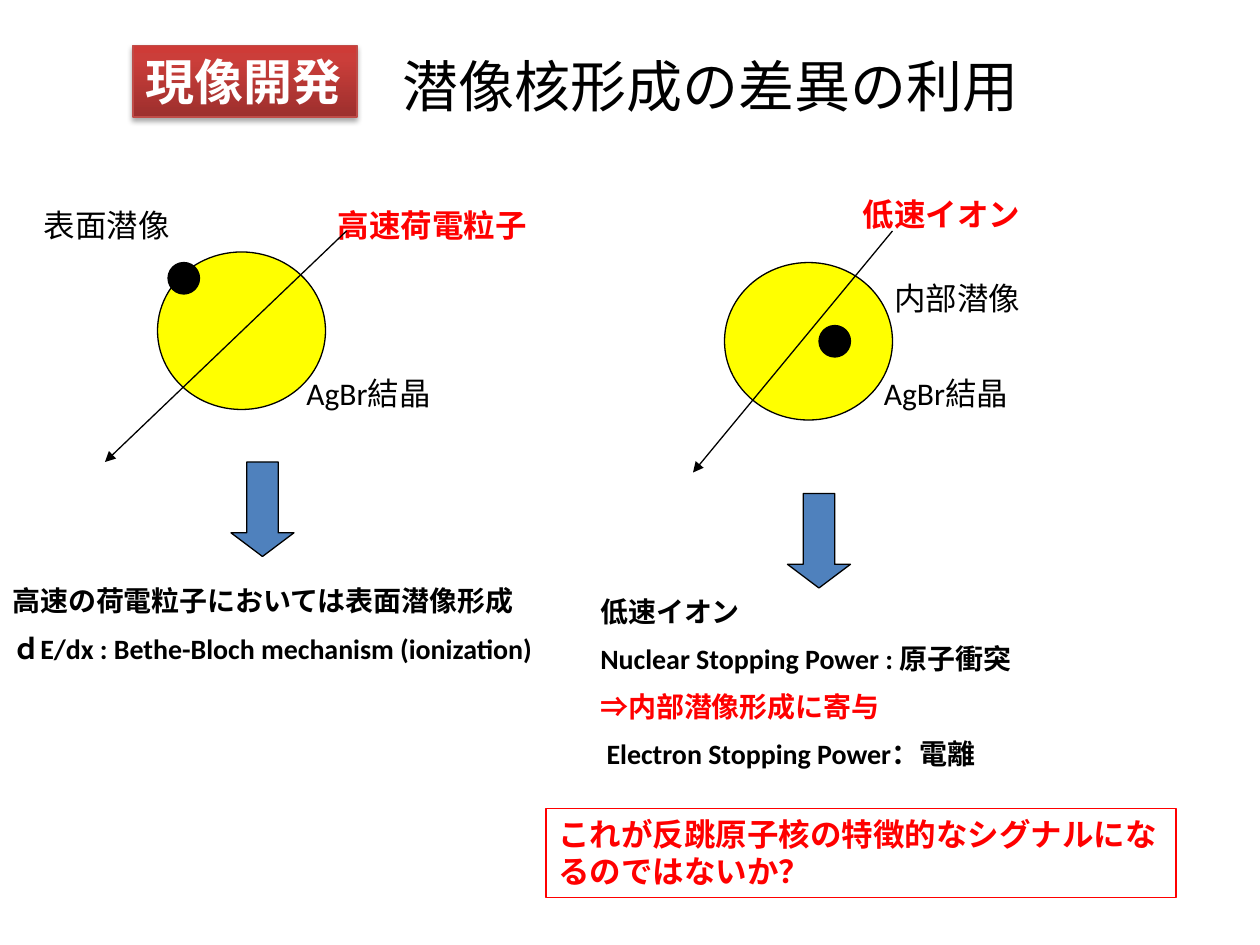
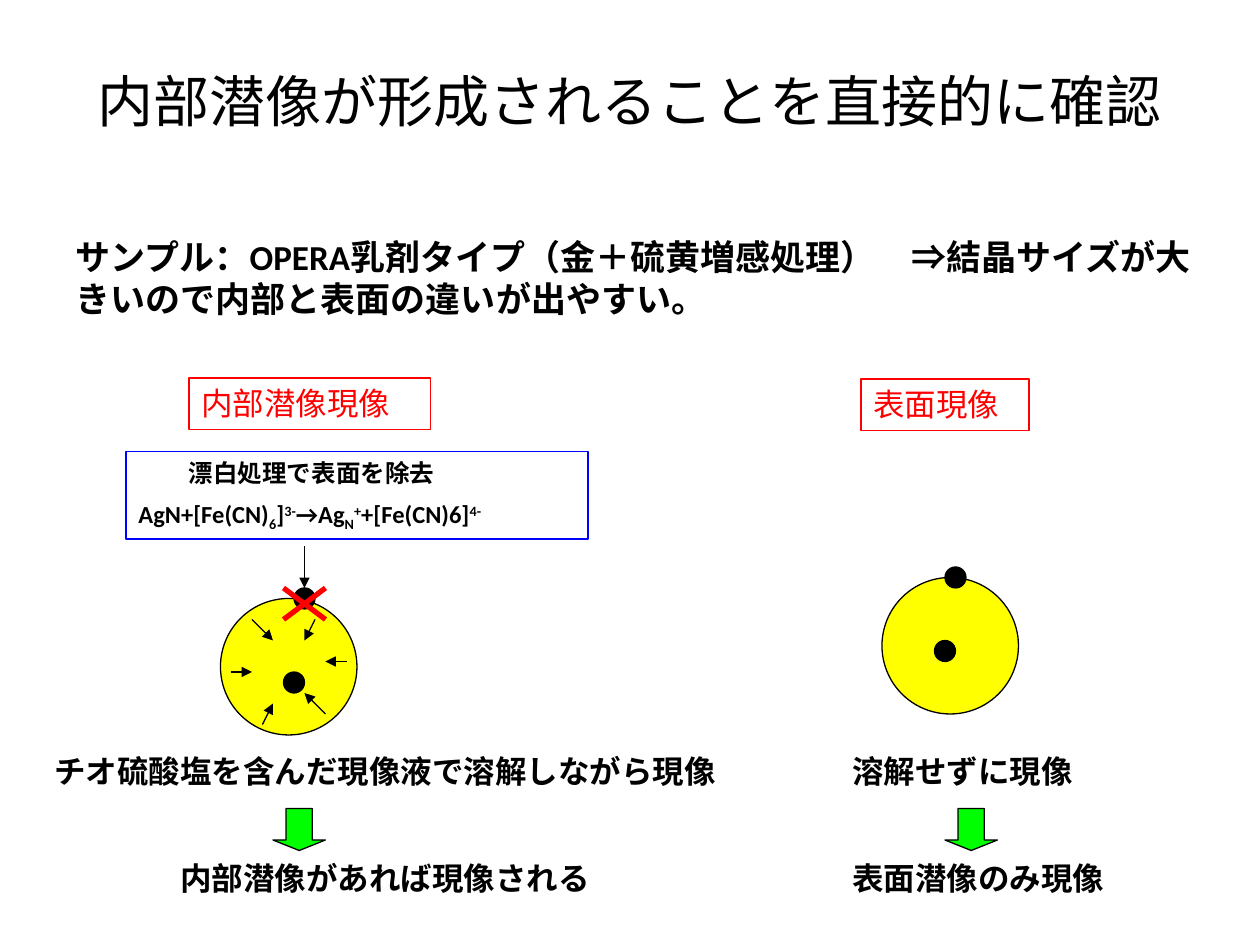
from copy import deepcopy
from dataclasses import dataclass

from lxml import etree
from pptx import Presentation
from pptx.dml.color import RGBColor
from pptx.enum import shapes, text
from pptx.oxml import ns
from pptx.util import Pt


@dataclass(frozen=True)
class Theme:
    """Colours, font and type sizes of the deck."""
    font: str = "Calibri"
    black: str = "000000"
    white: str = "FFFFFF"
    red: str = "FF0000"
    blue: str = "0000FF"
    crystal: str = "FFFF00"
    steel: str = "4F81BD"
    green: str = "00FF00"
    badge_edge: str = "BF4C48"
    badge_stops: tuple = ((0, "9C2F2D"), (0.8, "CB3E3A"), (1, "CE3B37"))
    title: int = 32
    badge: int = 28
    lead: int = 20
    label: int = 18
    body: int = 16
    formula: int = 14
    thin: float = 0.75
    thick: float = 3


@dataclass(frozen=True)
class Para:
    """A paragraph: a string or (string, baseline) pairs, with its layout."""
    content: object
    color: str = ""
    indent: float = 0
    gap: float = 0


T = Theme()
SHAPE = shapes.MSO_SHAPE


def rgb(color):
    """Turn a hex string into a colour."""
    return RGBColor.from_string(color)


def assign(obj, values):
    """Set attributes from a dict of format values."""
    for name, value in values.items():
        setattr(obj, name, value)


def add_xml(parent, tag, **attrs):
    """Append a DrawingML element."""
    el = etree.SubElement(parent, ns.qn("a:" + tag))
    for name, value in attrs.items():
        el.set(name, str(value))
    return el


def set_font(font, size, color, bold=False):
    """Apply the deck font."""
    assign(font, {"name": T.font, "size": Pt(size), "bold": bold})
    font.color.rgb = rgb(color)


def outline(sp, color, width=T.thin):
    """Give a shape or connector a solid line."""
    sp.line.color.rgb = rgb(color)
    sp.line.width = Pt(width)


def write(tf, paras, size, color, bold=False, wrap=True):
    """Fill a text frame, spacing later paragraphs by half the type size."""
    assign(tf, {"word_wrap": wrap, "vertical_anchor": text.MSO_ANCHOR.TOP,
                "auto_size": text.MSO_AUTO_SIZE.SHAPE_TO_FIT_TEXT})
    for i, item in enumerate(paras):
        para = item if isinstance(item, Para) else Para(item)
        p = tf.add_paragraph() if i else tf.paragraphs[0]
        p.alignment = text.PP_ALIGN.LEFT
        if i:
            p.space_before = Pt(para.gap or size / 2)
        if para.indent:
            p._p.get_or_add_pPr().set("marL", str(Pt(para.indent)))
        content = para.content
        for words, base in [(content, 0)] if isinstance(content, str) else content:
            r = p.add_run()
            r.text = words
            set_font(r.font, size, para.color or color, bold)
            if base:
                r._r.get_or_add_rPr().set("baseline", str(base * 1000))


def add_text(sl, at, *paras, size=T.label, color=T.black, bold=False):
    """Add a plain text box."""
    sp = sl.shapes.add_textbox(*map(Pt, at))
    write(sp.text_frame, paras, size, color, bold)


def add_frame(sl, at, *paras, edge=T.red, size=T.label, color=T.red, bold=False, wrap=True):
    """Add an outlined, unfilled box with text."""
    sp = sl.shapes.add_shape(SHAPE.RECTANGLE, *map(Pt, at))
    sp.shadow.inherit = False
    sp.fill.background()
    outline(sp, edge)
    write(sp.text_frame, paras, size, color, bold, wrap)
    return sp


def add_badge(sl, at, words):
    """Add a gradient badge with a soft shadow."""
    sp = add_frame(sl, at, words, edge=T.badge_edge, size=T.badge,
                   color=T.white, bold=True, wrap=False)
    sp.fill.gradient()
    sp.fill.gradient_angle = 90
    stops = sp._element.spPr.find(".//" + ns.qn("a:gsLst"))
    stops.insert(1, deepcopy(stops[0]))
    for stop, (position, color) in zip(sp.fill.gradient_stops, T.badge_stops):
        stop.position = position
        stop.color.rgb = rgb(color)
    effects = sp._element.spPr.find(ns.qn("a:effectLst"))
    shadow = add_xml(effects, "outerShdw", blurRad=Pt(3.1), dist=Pt(1.8),
                     dir=90 * 60000, rotWithShape=0)
    add_xml(add_xml(shadow, "srgbClr", val=T.black), "alpha", val=35000)


def add_solid(sl, kind, at, fill):
    """Add a filled preset shape with a thin black line."""
    sp = sl.shapes.add_shape(kind, *map(Pt, at))
    sp.shadow.inherit = False
    sp.fill.solid()
    sp.fill.fore_color.rgb = rgb(fill)
    outline(sp, T.black)
    return sp


def add_crystal(sl, x, y, w, h):
    """Add a silver bromide crystal."""
    add_solid(sl, SHAPE.OVAL, (x, y, w, h), T.crystal)


def add_speck(sl, x, y, d):
    """Add a latent image speck."""
    add_solid(sl, SHAPE.OVAL, (x, y, d, d), T.black)


def add_down_arrow(sl, at, head, fill):
    """Add a block arrow pointing down."""
    sp = add_solid(sl, SHAPE.DOWN_ARROW, at, fill)
    sp.adjustments[0], sp.adjustments[1] = 0.5, head


def add_line(sl, ends, color=T.black, width=T.thin, arrow=True):
    """Add a straight line, with an arrowhead at its end if asked."""
    sp = sl.shapes.add_connector(shapes.MSO_CONNECTOR.STRAIGHT, *map(Pt, ends))
    outline(sp, color, width)
    if arrow:
        add_xml(sp.line._get_or_add_ln(), "tailEnd", type="triangle")
    add_xml(sp._element.spPr, "effectLst")


def add_slide(prs, title, left, top):
    """Add a slide with its centred title."""
    sl = prs.slides.add_slide(prs.slide_layouts[5])
    sp = sl.shapes.title
    assign(sp, {"left": Pt(left), "top": Pt(top), "width": Pt(648), "height": Pt(90)})
    sp.text_frame.vertical_anchor = text.MSO_ANCHOR.MIDDLE
    p = sp.text_frame.paragraphs[0]
    p.alignment = text.PP_ALIGN.CENTER
    r = p.add_run()
    r.text = title
    set_font(r.font, T.title, T.black)
    return sl


def add_particle_hit(sl, crystal, track, speck, arrow):
    """Draw a particle crossing a crystal and the arrow to its outcome."""
    add_crystal(sl, *crystal, 96, 90)
    add_line(sl, track)
    add_speck(sl, *speck, 18)
    add_down_arrow(sl, (*arrow, 36, 54), 0.375, T.steel)


def build_formation(prs):
    """Compare latent images left by fast particles and slow ions."""
    sl = add_slide(prs, "潜像核形成の差異の利用", 82, 3.6)
    add_text(sl, (186, 114, 126, 28.8), "高速荷電粒子", color=T.red, bold=True)
    add_text(sl, (486, 108, 126, 28.8), "低速イオン", color=T.red, bold=True)
    add_particle_hit(sl, (90, 144), (198, 132, 60, 264), (96, 150), (132, 264))
    add_particle_hit(sl, (414, 150), (510, 132, 396, 270), (468, 186), (450, 282))
    for x in (168, 498):
        add_text(sl, (x, 210, 156, 28.8), "AgBr結晶")
    add_text(sl, (18, 114, 132, 28.8), "表面潜像")
    add_text(sl, (504, 156, 132, 28.8), "内部潜像")
    add_text(sl, (0, 330, 330, 75), "高速の荷電粒子においては表面潜像形成",
             "ｄE/dx : Bethe-Bloch mechanism (ionization)", size=T.body, bold=True)
    add_text(sl, (336, 336, 330, 113), "低速イオン",
             "Nuclear Stopping Power : 原子衝突",
             Para("⇒内部潜像形成に寄与", color=T.red),
             Para("Electron Stopping Power：電離", indent=3.6),
             size=T.body, bold=True)
    add_frame(sl, (312, 462, 360, 51),
              "これが反跳原子核の特徴的なシグナルになるのではないか？", bold=True)
    add_badge(sl, (76, 26, 128, 41), "現像開発")


def build_confirmation(prs):
    """Compare internal development with surface development."""
    sl = add_slide(prs, "内部潜像が形成されることを直接的に確認", 36, 12)
    add_text(sl, (36, 131, 654, 55.4),
             "サンプル：OPERA乳剤タイプ（金＋硫黄増感処理）　⇒結晶サイズが"
             "大きいので内部と表面の違いが出やすい。", size=T.lead, bold=True)
    add_frame(sl, (108, 216, 138, 29.5), "内部潜像現像")
    add_frame(sl, (492, 216.5, 96, 29.5), "表面現像")

    for crystal, specks in (((126, 342), ((162, 384), (168, 336))),
                            ((504, 330), ((540, 324), (534, 366)))):
        add_crystal(sl, *crystal, 78, 78)
        for speck in specks:
            add_speck(sl, *speck, 12)

    dissolving = ((150, 414, 156, 402), (132, 384, 144, 384), (144, 354, 156, 366),
                  (180, 354, 174, 366), (186, 408, 174, 396), (198, 378, 186, 378))
    bleaching = (174, 312, 174, 336)
    for ends in (*dissolving, bleaching):
        add_line(sl, ends)
    for ends in ((186, 336, 162, 354), (162, 336, 186, 354)):
        add_line(sl, ends, T.red, T.thick, arrow=False)

    reaction = (("AgN+[Fe(CN)", 0), ("6", -25), ("]", 0), ("3-", 30), ("→Ag", 0),
                ("N", -25), ("+", 30), ("+[Fe(CN)6]", 0), ("4-", 30))
    add_frame(sl, (72, 258, 264, 50), Para("漂白処理で表面を除去", indent=28.8),
              Para(reaction), edge=T.blue, size=T.formula, color=T.black, bold=True)

    for x, width, method, outcome, indent, arrow_x in (
            (24, 396, "チオ硫酸塩を含んだ現像液で溶解しながら現像",
             "内部潜像があれば現像される", 72, 156),
            (480, 252, "溶解せずに現像", "表面潜像のみ現像", 0, 540)):
        add_text(sl, (x, 426, width, 93.6), method,
                 Para(outcome, indent=indent, gap=40), bold=True)
        add_down_arrow(sl, (arrow_x, 462, 30, 24), 0.25, T.green)


def main():
    """Build and save the deck."""
    prs = Presentation()
    assign(prs, {"slide_width": Pt(720), "slide_height": Pt(540)})
    build_formation(prs)
    build_confirmation(prs)
    prs.save("out.pptx")


if __name__ == "__main__":
    main()
